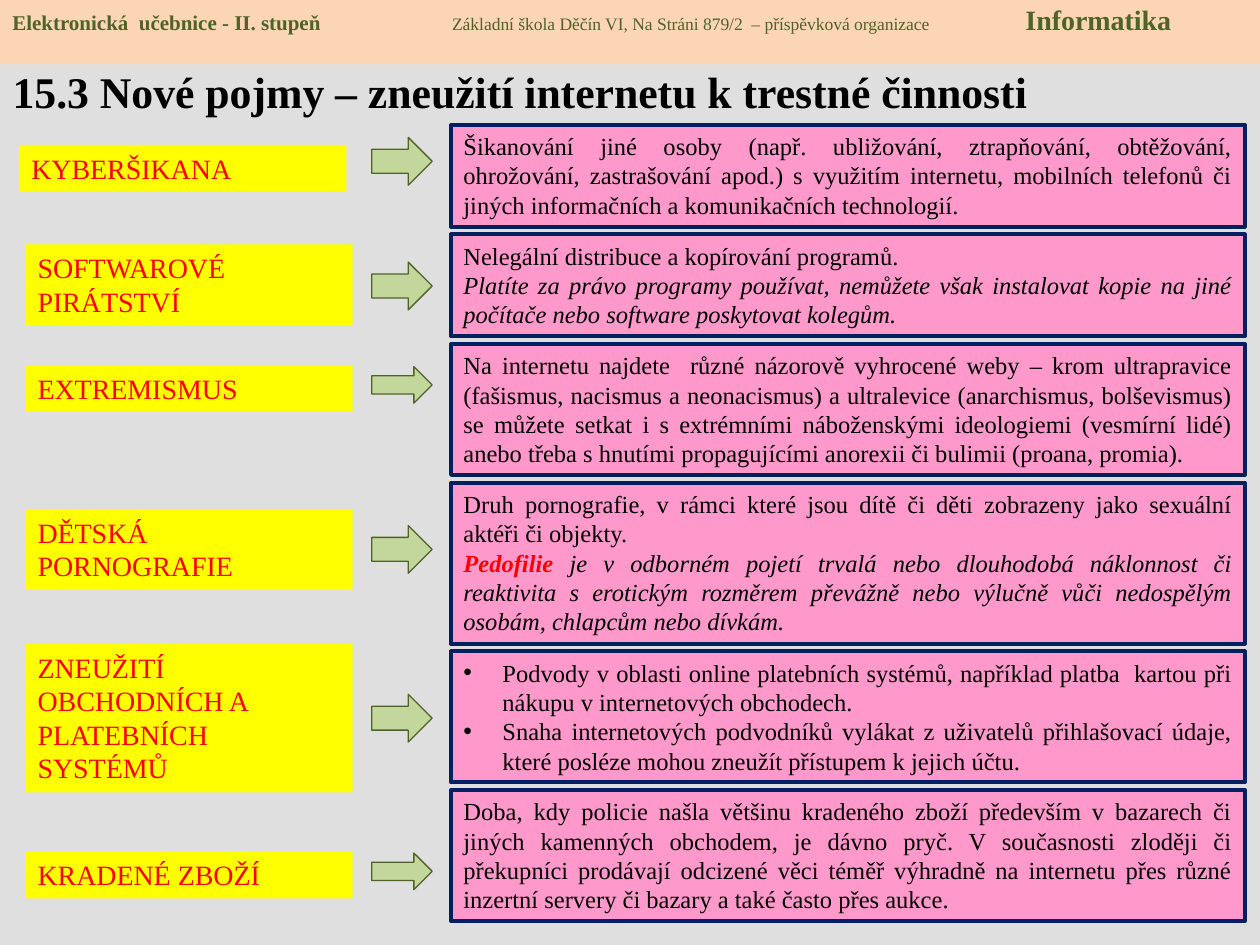
from dataclasses import dataclass

from lxml.etree import SubElement
from pptx import Presentation
from pptx.dml.color import RGBColor
from pptx.enum.shapes import MSO_SHAPE
from pptx.enum.text import MSO_ANCHOR, MSO_AUTO_SIZE, PP_ALIGN
from pptx.oxml.ns import qn
from pptx.util import Inches, Pt


@dataclass(frozen=True)
class Theme:
    font: str = "Times New Roman"
    back: str = "DFDFDF"
    band: str = "FCD5B5"
    green: str = "4F6228"
    leaf: str = "C3D69B"
    yellow: str = "FFFF00"
    pink: str = "FF99CC"
    navy: str = "002060"
    red: str = "FF0000"
    black: str = "000000"
    title: int = 25
    label: int = 16
    body: int = 14
    head: int = 12
    small: int = 10


@dataclass(frozen=True)
class Row:
    """One term; drops are measured from the top of the row."""
    term: str
    lines: int
    drop: float
    arrow: tuple  # drop, height
    height: float
    paras: list  # each a list of (text, style) runs
    bullet: bool = False
    left: float = 0.2


T = Theme()
GAP = 0.06
ITALIC = {"italic": True}

ROWS = [
    Row("KYBERŠIKANA", 1, 0.16, (0.1, 0.38), 0.81, [
        [("Šikanování jiné osoby (např. ubližování, ztrapňování, obtěžování, "
          "ohrožování, zastrašování apod.) s využitím internetu, mobilních "
          "telefonů či jiných informačních a komunikačních technologií.", {})],
    ], left=0.15),
    Row("SOFTWAROVÉ PIRÁTSTVÍ", 2, 0.08, (0.22, 0.38), 0.81, [
        [("Nelegální distribuce a kopírování programů.", {})],
        [("Platíte za právo programy používat, nemůžete však instalovat kopie "
          "na jiné počítače nebo software poskytovat kolegům.", ITALIC)],
    ]),
    Row("EXTREMISMUS", 1, 0.17, (0.18, 0.29), 1.04, [
        [("Na internetu najdete  různé názorově vyhrocené weby – krom "
          "ultrapravice (fašismus, nacismus a neonacismus) a ultralevice "
          "(anarchismus, bolševismus) se můžete setkat i s extrémními "
          "náboženskými ideologiemi (vesmírní lidé) anebo třeba s hnutími "
          "propagujícími anorexii či bulimii (proana, promia).", {})],
    ]),
    Row("DĚTSKÁ PORNOGRAFIE", 2, 0.21, (0.34, 0.38), 1.28, [
        [("Druh pornografie, v rámci které jsou dítě či děti zobrazeny jako "
          "sexuální aktéři či objekty.", {})],
        [("Pedofilie ", {"color": T.red, "bold": True, "italic": True}),
         ("je v odborném pojetí trvalá nebo dlouhodobá náklonnost či "
          "reaktivita s erotickým rozměrem převážně nebo výlučně vůči "
          "nedospělým osobám, chlapcům nebo dívkám.", ITALIC)],
    ]),
    Row("ZNEUŽITÍ OBCHODNÍCH A PLATEBNÍCH  SYSTÉMŮ", 4, -0.06, (0.34, 0.38), 1.04, [
        [("Podvody v oblasti online platebních systémů, například platba  "
          "kartou při nákupu v internetových obchodech.", {})],
        [("Snaha internetových podvodníků vylákat z uživatelů přihlašovací "
          "údaje, které posléze mohou zneužít přístupem k jejich účtu.", {})],
    ], bullet=True),
    Row("KRADENÉ ZBOŽÍ", 1, 0.49, (0.5, 0.29), 1.04, [
        [("Doba, kdy policie našla většinu kradeného zboží především v "
          "bazarech či jiných kamenných obchodem, je dávno pryč. V současnosti "
          "zloději či překupníci prodávají odcizené věci téměř výhradně na "
          "internetu přes různé inzertní servery či bazary a také často přes "
          "aukce.", {})],
    ]),
]


def shape(slide, kind, box, fill, line=None, width=0):
    item = slide.shapes.add_shape(kind, *map(Inches, box))
    item.shadow.inherit = False
    item.fill.solid()
    item.fill.fore_color.rgb = RGBColor.from_string(fill)
    if line:
        item.line.color.rgb = RGBColor.from_string(line)
        item.line.width = Pt(width)
    else:
        item.line.fill.background()
    frame = item.text_frame
    frame.word_wrap = True
    frame.vertical_anchor = MSO_ANCHOR.TOP
    frame.paragraphs[0].alignment = PP_ALIGN.LEFT
    return item


def write(para, text, size, color=T.black, bold=False, italic=False):
    run = para.add_run()
    run.text = text
    font = run.font
    font.name, font.size = T.font, Pt(size)
    font.bold, font.italic = bold, italic
    font.color.rgb = RGBColor.from_string(color)


def set_tabs(para, stops):
    tabs = SubElement(para._p.get_or_add_pPr(), qn("a:tabLst"))
    for stop in stops:
        SubElement(tabs, qn("a:tab"), pos=str(Inches(stop)), algn="l")


def set_bullet(para, indent):
    props = para._p.get_or_add_pPr()
    props.set("marL", str(Inches(indent)))
    props.set("indent", str(-Inches(indent)))
    SubElement(props, qn("a:buFont"), typeface="Arial")
    SubElement(props, qn("a:buChar"), char="•")


def add_header(slide, box):
    para = shape(slide, MSO_SHAPE.RECTANGLE, box, T.band).text_frame.paragraphs[0]
    set_tabs(para, (3.49, 8.04))
    write(para, "Elektronická  učebnice - II. stupeň\t", T.head, T.green, True)
    write(para, "Základní škola Děčín VI, Na Stráni 879/2  – příspěvková "
          "organizace\t", T.small, T.green)
    write(para, "Informatika", T.label, T.green, True)


def add_title(slide, box):
    title = slide.shapes.title
    title.left, title.top, title.width, title.height = map(Inches, box)
    frame = title.text_frame
    frame.auto_size = MSO_AUTO_SIZE.NONE
    frame.vertical_anchor = MSO_ANCHOR.MIDDLE
    para = frame.paragraphs[0]
    para.alignment = PP_ALIGN.LEFT
    write(para, "15.3 Nové pojmy – zneužití internetu k trestné činnosti",
          T.title, bold=True)


def add_detail(slide, box, row):
    frame = shape(slide, MSO_SHAPE.RECTANGLE, box, T.pink, T.navy, 2.25).text_frame
    for index, runs in enumerate(row.paras):
        para = frame.add_paragraph() if index else frame.paragraphs[0]
        para.alignment = PP_ALIGN.JUSTIFY
        if row.bullet:
            set_bullet(para, 0.31)
        for text, style in runs:
            write(para, text, T.body, **style)


def add_row(slide, box, row):
    left, top, width, height = box
    place = (left + row.left, top + row.drop, 2.6, 0.1 + 0.27 * row.lines)
    label = shape(slide, MSO_SHAPE.RECTANGLE, place, T.yellow)
    write(label.text_frame.paragraphs[0], row.term, T.label, T.red)
    drop, tall = row.arrow
    shape(slide, MSO_SHAPE.RIGHT_ARROW, (left + 2.95, top + drop, 0.48, tall),
          T.leaf, T.green, 0.75)
    add_detail(slide, (left + 3.58, top, width - 3.58, height), row)


def main():
    deck = Presentation()
    deck.slide_width, deck.slide_height = Inches(10), Inches(7.5)
    slide = deck.slides.add_slide(deck.slide_layouts[5])
    slide.background.fill.solid()
    slide.background.fill.fore_color.rgb = RGBColor.from_string(T.back)
    add_header(slide, (0, -0.03, 10, 0.54))
    add_title(slide, (0, 0.23, 9, 0.98))
    top = 0.99
    for row in ROWS:
        add_row(slide, (0, top, 9.88, row.height), row)
        top += row.height + GAP
    deck.save("out.pptx")


if __name__ == "__main__":
    main()
